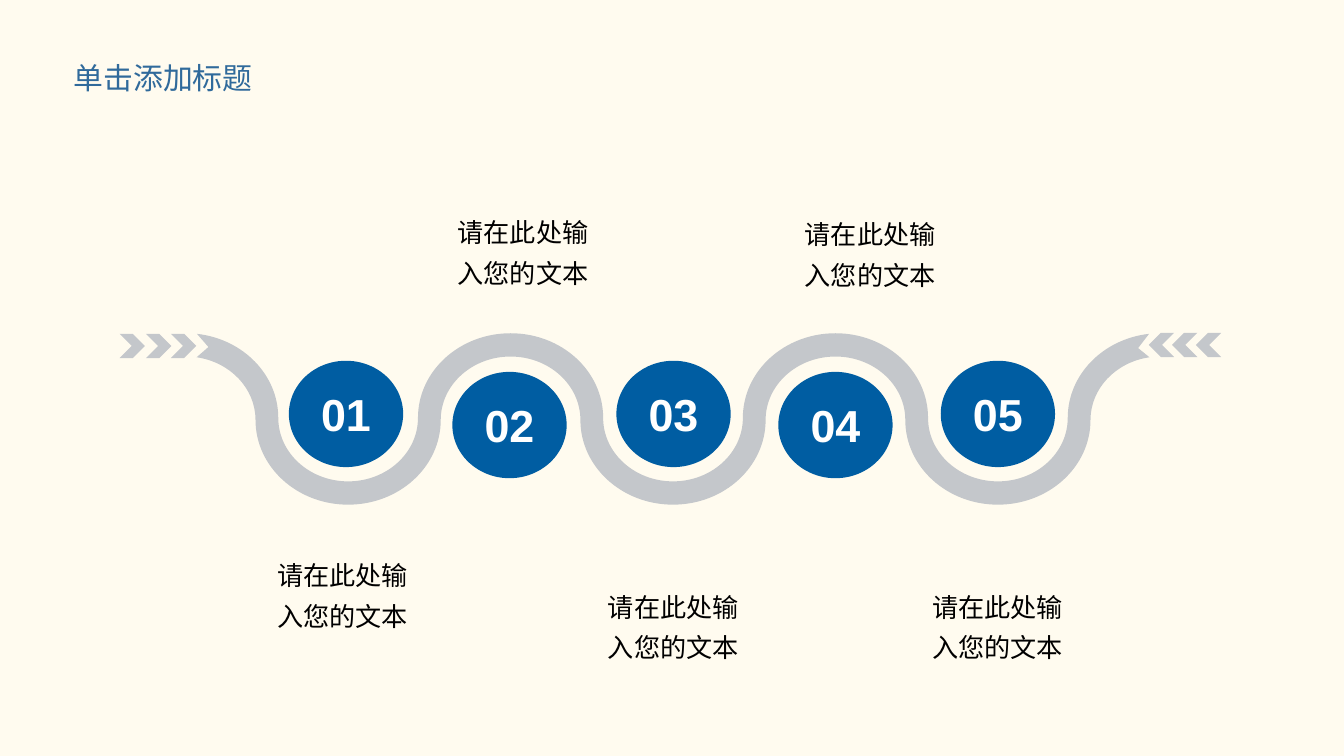
from dataclasses import dataclass
from math import cos, radians, sin, tan

from lxml import etree
from pptx import Presentation
from pptx import util as u
from pptx.dml.color import RGBColor
from pptx.enum import shapes, text
from pptx.oxml.ns import qn

Point = tuple[float, float]


@dataclass(frozen=True)
class Theme:
    background: str = "FFFBEF"
    title: str = "306A9B"
    circle: str = "005DA2"
    ribbon: str = "C4C7CB"
    number: str = "FFFFFF"
    body: str = "000000"
    latin: str = "Arial"
    chinese: str = "Noto Sans CJK SC"
    title_size: int = 16
    number_size: int = 24
    body_size: int = 14


@dataclass(frozen=True)
class Step:
    number: str
    circle_left: float
    circle_top: float
    label_left: float
    label_top: float


@dataclass(frozen=True)
class Radius:
    x: float
    y: float


THEME = Theme()
LABEL = "请在此处输入您的文本"
STEPS = [
    Step("01", 5.46, 6.82, 4.99, 10.31),
    Step("02", 8.55, 7.03, 8.4, 3.82),
    Step("03", 11.65, 6.82, 11.24, 10.9),
    Step("04", 14.71, 7.03, 14.96, 3.86),
    Step("05", 17.78, 6.82, 17.37, 10.9),
]
OUTER = Radius(1.75, 1.6)
INNER = Radius(1.32, 1.2)
FIRST_BEND, BEND_GAP, BENDS = 3.51, 3.07, 7
LEFT_NOTCH, RIGHT_NOTCH = (3.94, 6.56), (21.51, 6.58)


def cm(*values: float) -> list[int]:
    return [u.Cm(value) for value in values]


def paint(shape, color: str) -> None:
    shape.shadow.inherit = False
    shape.fill.solid()
    shape.fill.fore_color.rgb = RGBColor.from_string(color)
    shape.line.fill.background()


def write(box, words: str, size: int, color: str, font: str, bold: bool = False,
          frame_format: dict | None = None, para_format: dict | None = None) -> None:
    frame = box.text_frame
    para = frame.paragraphs[0]
    span = para.add_run()
    span.text = words
    span.font.color.rgb = RGBColor.from_string(color)
    span_format = {"name": font, "size": u.Pt(size), "bold": bold}
    for target, values in (
        (frame, {"word_wrap": True, **(frame_format or {})}),
        (para, para_format or {}),
        (span.font, span_format),
    ):
        for name, value in values.items():
            setattr(target, name, value)
    etree.SubElement(span.font._element, qn("a:ea"), typeface=font)


def draw_title(page, words: str) -> None:
    box = page.shapes.title
    box.left, box.top, box.width, box.height = cm(1.14, 1, 4.9, 0.94)
    write(box, words, THEME.title_size, THEME.title, THEME.chinese,
          frame_format={"vertical_anchor": text.MSO_ANCHOR.TOP,
                        "auto_size": text.MSO_AUTO_SIZE.SHAPE_TO_FIT_TEXT},
          para_format={"alignment": text.PP_ALIGN.LEFT})


def draw_circle(page, step: Step) -> None:
    circle = page.shapes.add_shape(
        shapes.MSO_SHAPE.OVAL, *cm(step.circle_left, step.circle_top, 2.16, 2.01))
    paint(circle, THEME.circle)
    write(circle, step.number, THEME.number_size, THEME.number, THEME.latin, True,
          {"vertical_anchor": text.MSO_ANCHOR.MIDDLE,
           "margin_left": u.Cm(0.18), "margin_right": u.Cm(0.18),
           "margin_top": u.Cm(0.1), "margin_bottom": u.Cm(0.1)},
          {"alignment": text.PP_ALIGN.CENTER})


def draw_label(page, step: Step) -> None:
    label = page.shapes.add_textbox(*cm(step.label_left, step.label_top, 3.02, 1.73))
    write(label, LABEL, THEME.body_size, THEME.body, THEME.chinese,
          frame_format={"vertical_anchor": text.MSO_ANCHOR.MIDDLE,
                        "auto_size": text.MSO_AUTO_SIZE.SHAPE_TO_FIT_TEXT},
          para_format={"line_spacing": 1.3})


def draw_chevron(page, left: float, top: float, rotation: int) -> None:
    chevron = page.shapes.add_shape(shapes.MSO_SHAPE.CHEVRON, *cm(left, top, 0.48, 0.46))
    chevron.rotation = rotation
    paint(chevron, THEME.ribbon)


def arc(center: float, middle: float, radius: Radius, start: int, end: int) -> list[Point]:
    a, b = radians(start), radians(end)
    pull = 4 / 3 * tan((b - a) / 4)
    units = [
        (cos(a), sin(a)),
        (cos(a) - pull * sin(a), sin(a) + pull * cos(a)),
        (cos(b) + pull * sin(b), sin(b) - pull * cos(b)),
        (cos(b), sin(b)),
    ]
    return [(center + radius.x * x, middle - radius.y * y) for x, y in units]


def wave_edge(peak: Radius, valley: Radius, middle: float, cut: int) -> list[Point]:
    points = []
    for bend in range(BENDS):
        radius, top = (valley, 270) if bend % 2 else (peak, 90)
        angles = [180, top, 360 if bend % 2 else 0]
        if bend == 0:
            angles = [cut, 0]
        elif bend == BENDS - 1:
            angles = [180, 180 - cut]
        for start, end in zip(angles, angles[1:]):
            curve = arc(FIRST_BEND + bend * BEND_GAP, middle, radius, start, end)
            points += curve[1:] if points else curve
    return points


def bend_lines(shape) -> None:
    lines = list(shape._element.iter(qn("a:lnTo")))
    for first, second, third in zip(lines[::3], lines[1::3], lines[2::3]):
        curve = etree.Element(qn("a:cubicBezTo"))
        first.addprevious(curve)
        for line in (first, second, third):
            curve.append(line[0])
            line.getparent().remove(line)


def draw_ribbon(page) -> None:
    upper = wave_edge(OUTER, INNER, 7.9, 83)
    lower = wave_edge(INNER, OUTER, 7.94, 81)[::-1]
    points = [*upper, *[RIGHT_NOTCH] * 3, *[lower[0]] * 3, *lower[1:],
              *[LEFT_NOTCH] * 3, *[upper[0]] * 3]
    outline = [cm(*point) for point in points]
    builder = page.shapes.build_freeform(*outline[0])
    builder.add_line_segments(outline[1:], close=True)
    ribbon = builder.convert_to_shape()
    bend_lines(ribbon)
    paint(ribbon, THEME.ribbon)


def main() -> None:
    deck = Presentation()
    deck.slide_width, deck.slide_height = cm(25.4, 14.29)
    page = deck.slides.add_slide(deck.slide_layouts[5])
    page.background.fill.solid()
    page.background.fill.fore_color.rgb = RGBColor.from_string(THEME.background)
    draw_title(page, "单击添加标题")
    for step in reversed(STEPS):
        draw_circle(page, step)
    for left in (3.23, 2.76, 2.26):
        draw_chevron(page, left, 6.31, 0)
    draw_ribbon(page)
    for left in (21.71, 22.15, 22.6):
        draw_chevron(page, left, 6.29, 180)
    for step in STEPS:
        draw_label(page, step)
    deck.save("out.pptx")


if __name__ == "__main__":
    main()
